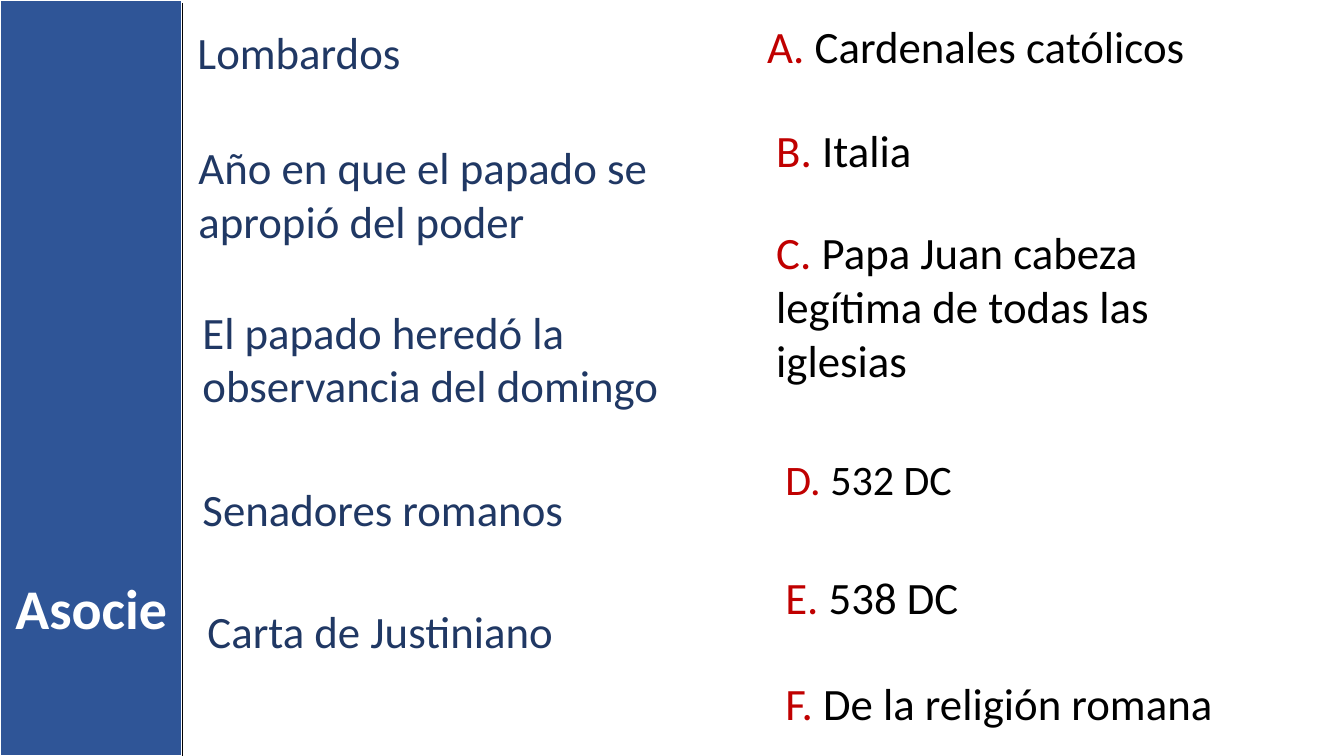
from lxml import etree
from pptx import Presentation
from pptx import util as u
from pptx.dml.color import RGBColor
from pptx.enum import shapes, text
from pptx.oxml import ns

PANEL_WIDTH = 1.81
SLIDE_HEIGHT = 7.5

# Left column: left, top, width, height, wording
CONCEPTS = [
    (1.86, 0.2, 5.11, 0.64, "Lombardos"),
    (1.87, 1.34, 4.94, 1.18, "Año en que el papado se apropió del poder"),
    (1.91, 2.97, 5.1, 1.18, "El papado heredó la observancia del domingo"),
    (1.91, 4.73, 4.94, 0.64, "Senadores romanos"),
    (1.96, 5.94, 4.77, 0.64, "Carta de Justiniano"),
]

# Right column: left, top, width, height, wording, text size
ANSWERS = [
    (7.51, 0.14, 5.04, 0.64, "Cardenales católicos", 32),
    (7.6, 1.17, 5.29, 0.64, "Italia", 32),
    (7.6, 2.18, 4.88, 1.72, "Papa Juan cabeza legítima de todas las iglesias", 32),
    (7.69, 4.45, 5.29, 0.61, "532 DC", 30),
    (7.69, 5.6, 5.53, 0.64, "538 DC", 32),
    (7.69, 6.65, 4.97, 0.64, "De la religión romana", 32),
]


def colour(value):
    return RGBColor.from_string(value)


def set_values(target, values):
    for name, value in values.items():
        setattr(target, name, value)


class SlideBuilder:
    font = "Calibri"
    panel, concept, letter = "2F5597", "203864", "C00000"
    black, white = "000000", "FFFFFF"

    def __init__(self, slide):
        self.slide = slide

    def rectangle(self, left, top, width, height):
        shape = self.slide.shapes.add_shape(
            shapes.MSO_SHAPE.RECTANGLE, *map(u.Inches, (left, top, width, height)))
        shape.shadow.inherit = False
        shape.fill.solid()
        shape.fill.fore_color.rgb = colour(self.panel)
        shape.line.color.rgb = colour(self.white)
        shape.line.width = u.Pt(1.5)
        return shape

    def fill_text(self, shape, runs, size, bold=False, align=text.PP_ALIGN.LEFT):
        set_values(shape.text_frame, {
            "word_wrap": True,
            "auto_size": text.MSO_AUTO_SIZE.SHAPE_TO_FIT_TEXT,
            "vertical_anchor": text.MSO_ANCHOR.TOP,
        })
        paragraph = shape.text_frame.paragraphs[0]
        set_values(paragraph, {"alignment": align, "line_spacing": 1.0,
                               "space_before": u.Pt(0)})
        for wording, ink in runs:
            run = paragraph.add_run()
            run.text = wording
            set_values(run.font, {"name": self.font, "size": u.Pt(size), "bold": bold})
            run.font.color.rgb = colour(ink)

    def label(self, left, top, width, height, runs, size=32):
        shape = self.slide.shapes.add_textbox(
            *map(u.Inches, (left, top, width, height)))
        self.fill_text(shape, runs, size)

    def title(self, left, top, width, height, wording, behind):
        shape = self.slide.shapes.title
        set_values(shape, {"left": u.Inches(left), "top": u.Inches(top),
                           "width": u.Inches(width), "height": u.Inches(height)})
        self.fill_text(shape, [(wording, self.white)], 40, True, text.PP_ALIGN.CENTER)
        # Bring the title in front of the panel
        behind.element.addnext(shape.element)

    def line(self, x1, y1, x2, y2):
        connector = self.slide.shapes.add_connector(
            shapes.MSO_CONNECTOR.STRAIGHT, *map(u.Inches, (x1, y1, x2, y2)))
        connector.line.color.rgb = colour(self.black)
        connector.line.width = u.Pt(1)
        properties = connector.element.find(ns.qn("p:spPr"))
        etree.SubElement(properties, ns.qn("a:effectLst"))


def main():
    presentation = Presentation()
    presentation.slide_width = u.Inches(13.33)
    presentation.slide_height = u.Inches(SLIDE_HEIGHT)
    title_only = presentation.slide_layouts[5]
    builder = SlideBuilder(presentation.slides.add_slide(title_only))

    # Side panel with the title
    panel = builder.rectangle(0, 0, PANEL_WIDTH, SLIDE_HEIGHT)
    builder.title(0, 5.64, PANEL_WIDTH, 0.77, "Asocie", panel)

    # Concepts to match
    for *box, wording in CONCEPTS:
        builder.label(*box, [(wording, builder.concept)])

    # Lettered answers
    for letter, (*box, wording, size) in zip("ABCDEF", ANSWERS):
        runs = [(f"{letter}. ", builder.letter), (wording, builder.black)]
        builder.label(*box, runs, size)

    # Panel edge
    builder.line(PANEL_WIDTH, 0.03, PANEL_WIDTH, SLIDE_HEIGHT)

    presentation.save("out.pptx")


if __name__ == "__main__":
    main()
